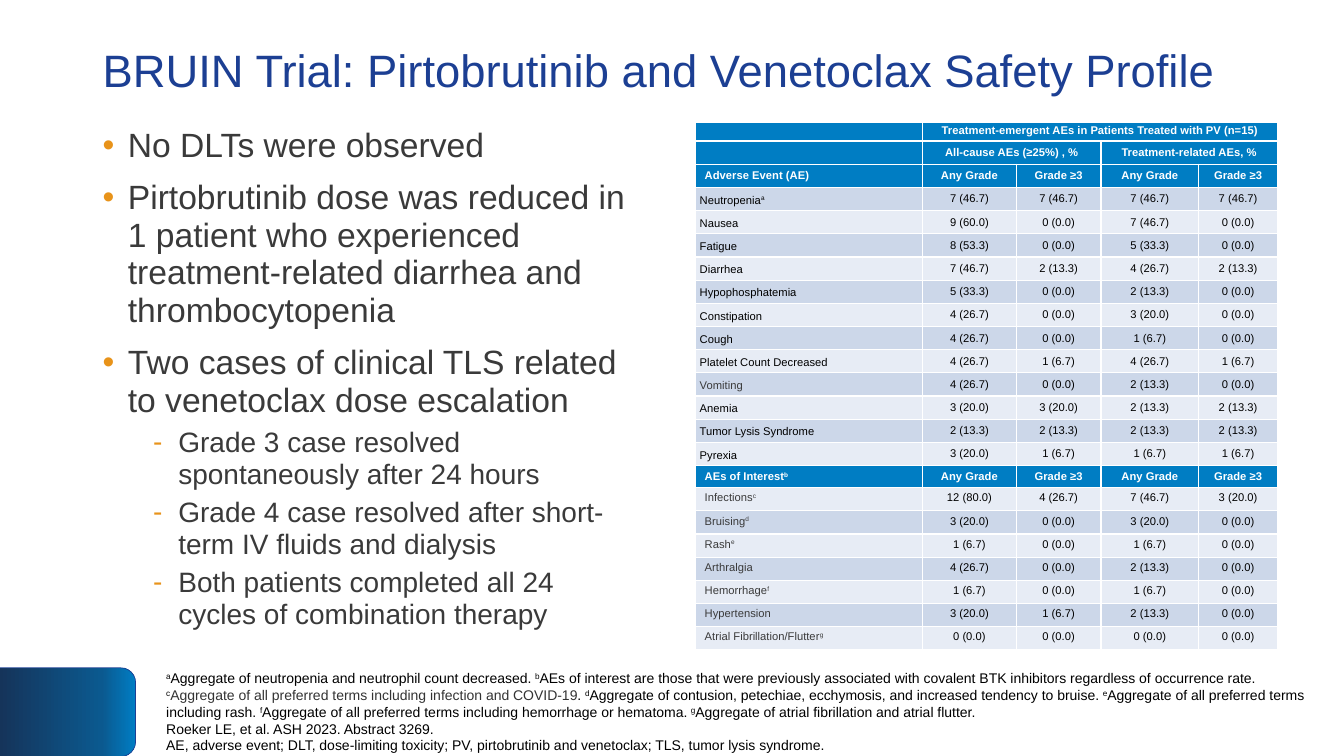
"""Build the BRUIN trial safety slide: key points, adverse event table and footnotes."""
from copy import deepcopy

from lxml import etree
from pptx import Presentation
from pptx import util as u
from pptx.dml.color import RGBColor
from pptx.enum import shapes, text
from pptx.oxml.ns import qn

PX = 9144
NAVY = RGBColor(0x1C, 0x3F, 0x93)
BLUE = RGBColor(0x00, 0x7D, 0xC3)
MID_BLUE = RGBColor(0x0B, 0x59, 0x8F)
DARK_BLUE = RGBColor(0x15, 0x34, 0x5A)
BAND = RGBColor(0xCC, 0xD7, 0xE9)
PALE = RGBColor(0xE7, 0xEC, 0xF5)
WHITE = RGBColor(0xFF, 0xFF, 0xFF)
BLACK = RGBColor(0, 0, 0)
GRAY = RGBColor(0x3A, 0x3A, 0x3A)
NOTE_GRAY = RGBColor(0x33, 0x33, 0x33)
MIDDLE = text.MSO_ANCHOR.MIDDLE


def add_box(left, top, width, height, anchor):
    tf = s.shapes.add_textbox(left * PX, top * PX, width * PX, height * PX).text_frame
    tf.word_wrap = True
    tf.vertical_anchor = anchor
    return tf


def add_runs(p, content, size, color, bold=False):
    """Add runs to a paragraph; every second part between bars is superscript."""
    for i, part in enumerate(content.split("|")):
        if part:
            r = p.add_run()
            r.text = part
            r.font.name, r.font.size, r.font.bold = "Arial", u.Pt(size), bold
            r.font.color.rgb = color
            if i % 2:
                r.font._element.set("baseline", "30000")


prs = Presentation()
prs.slide_width, prs.slide_height = 1333 * PX, 750 * PX
s = prs.slides.add_slide(prs.slide_layouts[6])

tab = s.shapes.add_shape(shapes.MSO_SHAPE.ROUND_2_SAME_RECTANGLE, 23 * PX, 639 * PX, 88 * PX, 135 * PX)
tab.rotation = 90
tab.shadow.inherit = False
tab.line.color.rgb = NAVY
tab.line.width = u.Pt(0.5)
tab.fill.gradient()
tab.fill.gradient_angle = 270
stop_list = tab._element.spPr.find(qn("a:gradFill")).find(qn("a:gsLst"))
stop_list.append(deepcopy(stop_list[0]))
for stop, position, color in zip(tab.fill.gradient_stops, (0, 0.25, 1), (BLUE, MID_BLUE, DARK_BLUE)):
    stop.position = position
    stop.color.rgb = color

grades = ["Any Grade", "Grade ≥3"] * 2
rows = [
    ["", "Treatment-emergent AEs in Patients Treated with PV (n=15)", "", "", ""],
    ["", "All-cause AEs (≥25%) , %", "", "Treatment-related AEs, %", ""],
    ["Adverse Event (AE)", *grades],
    ["Neutropenia|a", "7 (46.7)", "7 (46.7)", "7 (46.7)", "7 (46.7)"],
    ["Nausea", "9 (60.0)", "0 (0.0)", "7 (46.7)", "0 (0.0)"],
    ["Fatigue", "8 (53.3)", "0 (0.0)", "5 (33.3)", "0 (0.0)"],
    ["Diarrhea", "7 (46.7)", "2 (13.3)", "4 (26.7)", "2 (13.3)"],
    ["Hypophosphatemia", "5 (33.3)", "0 (0.0)", "2 (13.3)", "0 (0.0)"],
    ["Constipation", "4 (26.7)", "0 (0.0)", "3 (20.0)", "0 (0.0)"],
    ["Cough", "4 (26.7)", "0 (0.0)", "1 (6.7)", "0 (0.0)"],
    ["Platelet Count Decreased", "4 (26.7)", "1 (6.7)", "4 (26.7)", "1 (6.7)"],
    ["Vomiting", "4 (26.7)", "0 (0.0)", "2 (13.3)", "0 (0.0)"],
    ["Anemia", "3 (20.0)", "3 (20.0)", "2 (13.3)", "2 (13.3)"],
    ["Tumor Lysis Syndrome", "2 (13.3)", "2 (13.3)", "2 (13.3)", "2 (13.3)"],
    ["Pyrexia", "3 (20.0)", "1 (6.7)", "1 (6.7)", "1 (6.7)"],
    ["AEs of Interest|b", *grades],
    ["Infections|c", "12 (80.0)", "4 (26.7)", "7 (46.7)", "3 (20.0)"],
    ["Bruising|d", "3 (20.0)", "0 (0.0)", "3 (20.0)", "0 (0.0)"],
    ["Rash|e", "1 (6.7)", "0 (0.0)", "1 (6.7)", "0 (0.0)"],
    ["Arthralgia", "4 (26.7)", "0 (0.0)", "2 (13.3)", "0 (0.0)"],
    ["Hemorrhage|f", "1 (6.7)", "0 (0.0)", "1 (6.7)", "0 (0.0)"],
    ["Hypertension", "3 (20.0)", "1 (6.7)", "2 (13.3)", "0 (0.0)"],
    ["Atrial Fibrillation/Flutter|g", "0 (0.0)", "0 (0.0)", "0 (0.0)", "0 (0.0)"],
]
INTEREST = 15
table = s.shapes.add_table(len(rows), 5, 690 * PX, 121 * PX, 577 * PX, 524 * PX).table
table.first_row = table.horz_banding = False
for column, width in zip(table.columns, (225, 93, 84, 97, 78)):
    column.width = width * PX
for i, row in enumerate(rows):
    table.rows[i].height = (19 if i == 0 else 22 if i == INTEREST else 23) * PX
    header = i < 3 or i == INTEREST
    for j, content in enumerate(row):
        cell = table.cell(i, j)
        tcPr = cell._tc.get_or_add_tcPr()
        for side in ("lnL", "lnR", "lnT", "lnB"):
            ln = etree.SubElement(tcPr, qn(f"a:{side}"), w="12700")
            etree.SubElement(etree.SubElement(ln, qn("a:solidFill")), qn("a:srgbClr"), val=str(WHITE))
        cell.fill.solid()
        cell.fill.fore_color.rgb = BLUE if header else BAND if i % 2 else PALE
        cell.margin_left = cell.margin_right = (9 if header or i > INTEREST else 4) * PX
        cell.margin_top = cell.margin_bottom = (2 if i == 0 else 4) * PX
        if i == 0 or i > INTEREST:
            cell.vertical_anchor = text.MSO_ANCHOR.TOP
        elif j == 0 and not header:
            cell.vertical_anchor = text.MSO_ANCHOR.BOTTOM
        else:
            cell.vertical_anchor = MIDDLE
        p = cell.text_frame.paragraphs[0]
        if j:
            p.alignment = text.PP_ALIGN.CENTER
        gray = j == 0 and (i > INTEREST or content == "Vomiting")
        add_runs(p, content, 8, WHITE if header else GRAY if gray else BLACK, header)
        if not content:
            etree.SubElement(p._p, qn("a:endParaRPr"), sz="800")
for i, first, last in ((0, 1, 4), (1, 1, 2), (1, 3, 4)):
    table.cell(i, first).merge(table.cell(i, last))

tf = add_box(92, 29, 1150, 87, MIDDLE)
p = tf.paragraphs[0]
p.line_spacing = 0.9
add_runs(p, "BRUIN Trial: Pirtobrutinib and Venetoclax Safety Profile", 32.4, NAVY)

points = [
    (0, "No DLTs were observed"),
    (0, "Pirtobrutinib dose was reduced in 1 patient who experienced "
        "treatment-related diarrhea and thrombocytopenia"),
    (0, "Two cases of clinical TLS related to venetoclax dose escalation"),
    (1, "Grade 3 case resolved spontaneously after 24 hours"),
    (1, "Grade 4 case resolved after short-term IV fluids and dialysis"),
    (1, "Both patients completed all 24 cycles of combination therapy"),
]
tf = add_box(92, 121, 552, 535, text.MSO_ANCHOR.TOP)
for i, (level, content) in enumerate(points):
    p = tf.add_paragraph() if i else tf.paragraphs[0]
    p.level = level
    p.line_spacing = 0.94
    if i:
        p.space_before = u.Pt(5 if level else 10)
    pPr = p._p.get_or_add_pPr()
    pPr.set("marL", str((75 if level else 25) * PX))
    pPr.set("indent", str(-25 * PX))
    etree.SubElement(etree.SubElement(pPr, qn("a:buClr")), qn("a:srgbClr"), val="E8931A")
    etree.SubElement(pPr, qn("a:buFont"), typeface="Arial")
    etree.SubElement(pPr, qn("a:buChar"), char="-" if level else "•")
    add_runs(p, content, 20 if level else 24, GRAY)

tf = add_box(155, 662, 1165, 88, MIDDLE)
p = tf.paragraphs[0]
add_runs(p, "|a|Aggregate of neutropenia and neutrophil count decreased. "
            "|b|AEs of interest are those that were previously associated with covalent BTK inhibitors "
            "regardless of occurrence rate. |c|", 10, BLACK)
add_runs(p, "Aggregate of all preferred terms including infection and COVID-19", 10, NOTE_GRAY)
add_runs(p, ". |d|Aggregate of contusion, petechiae, ecchymosis, and increased tendency to bruise. "
            "|e|Aggregate of all preferred terms including rash. "
            "|f|Aggregate of all preferred terms including hemorrhage or hematoma. "
            "|g|Aggregate of atrial fibrillation and atrial flutter.", 10, BLACK)
for line in ("Roeker LE, et al. ASH 2023. Abstract 3269.",
             "AE, adverse event; DLT, dose-limiting toxicity; PV, pirtobrutinib and venetoclax; "
             "TLS, tumor lysis syndrome."):
    p.add_line_break()
    add_runs(p, line, 10, BLACK)

prs.save("out.pptx")
